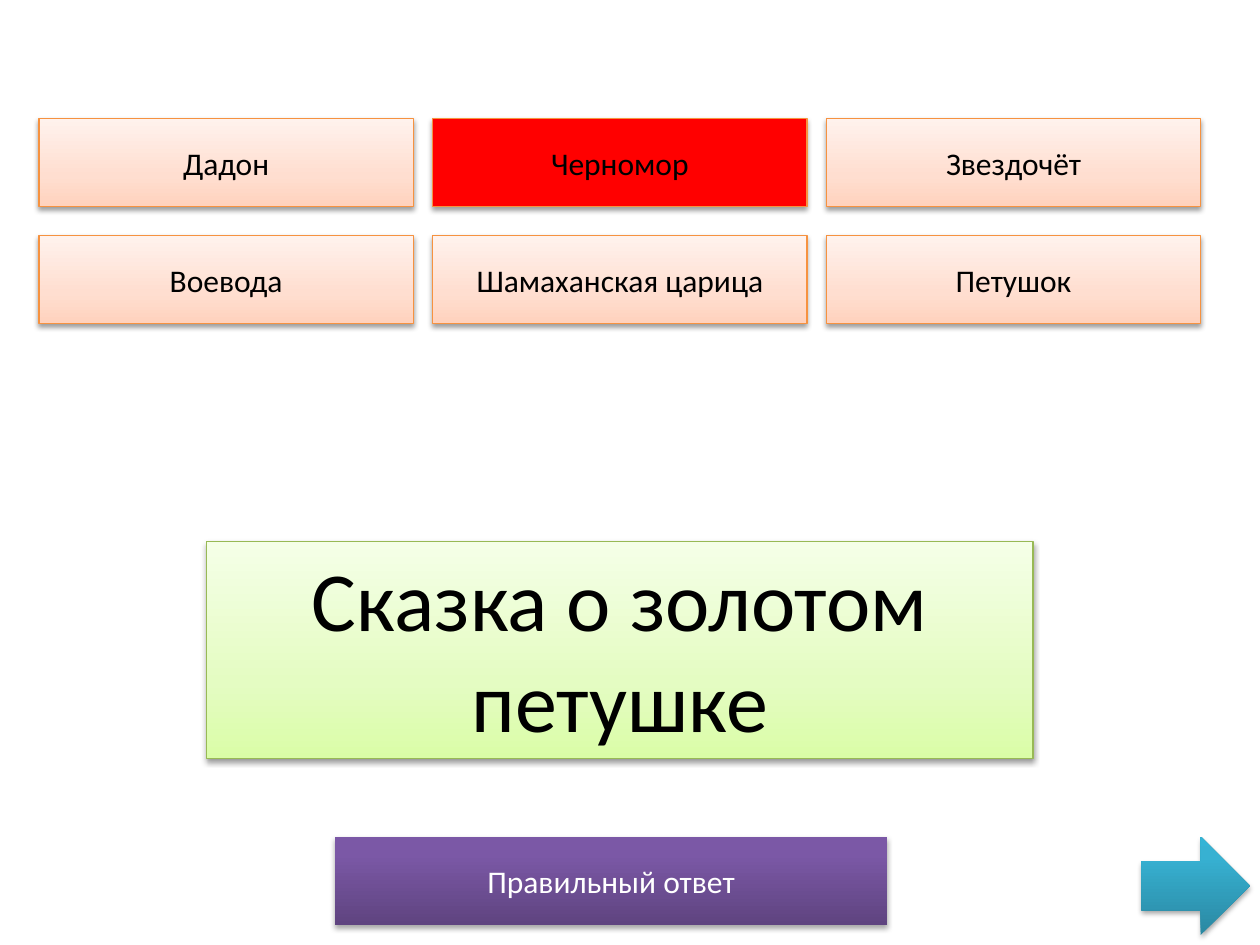
"""Builds a quiz slide: find the character who is not from the fairy tale."""
from copy import deepcopy

from lxml import etree
from pptx import Presentation
from pptx.dml.color import RGBColor
from pptx.enum.shapes import MSO_SHAPE
from pptx.enum.text import MSO_ANCHOR, MSO_AUTO_SIZE, PP_ALIGN
from pptx.oxml.ns import qn
from pptx.util import Inches, Pt

RECT, ARROW = MSO_SHAPE.RECTANGLE, MSO_SHAPE.RIGHT_ARROW
CENTER = PP_ALIGN.CENTER
TOP, MIDDLE = MSO_ANCHOR.TOP, MSO_ANCHOR.MIDDLE
GROW = MSO_AUTO_SIZE.SHAPE_TO_FIT_TEXT

BLACK = RGBColor(0x00, 0x00, 0x00)
WHITE = RGBColor(0xFF, 0xFF, 0xFF)
RED = RGBColor(0xFF, 0x00, 0x00)
ORANGE = RGBColor(0xF6, 0x92, 0x40)
GREEN = RGBColor(0x98, 0xB9, 0x55)
PEACH_STOPS = [(0, RGBColor(0xFF, 0xD2, 0xBD)), (0.35, RGBColor(0xFF, 0xDE, 0xD0)),
               (1, RGBColor(0xFF, 0xF2, 0xED))]
GREEN_STOPS = [(0, RGBColor(0xDA, 0xFD, 0xA7)), (0.35, RGBColor(0xE4, 0xFC, 0xC2)),
               (1, RGBColor(0xF5, 0xFF, 0xE7))]
PURPLE_STOPS = [(0, RGBColor(0x5F, 0x44, 0x80)), (0.8, RGBColor(0x7B, 0x58, 0xA6)),
                (1, RGBColor(0x7C, 0x57, 0xA8))]
TEAL_STOPS = [(0, RGBColor(0x2A, 0x88, 0xA2)), (0.8, RGBColor(0x37, 0xB1, 0xD2)),
              (1, RGBColor(0x34, 0xB4, 0xD6))]


def add_block(kind, left, top, width, height, stops, line=None):
    s = slide.shapes.add_shape(kind, Inches(left), Inches(top), Inches(width), Inches(height))
    s.fill.gradient()
    s.fill.gradient_angle = 90
    gs_list = s._element.spPr.find(qn("a:gradFill")).find(qn("a:gsLst"))
    gs_list.append(deepcopy(gs_list[0]))
    for stop, (position, color) in zip(s.fill.gradient_stops, stops):
        stop.position = position
        stop.color.rgb = color
    if line is None:
        s.line.fill.background()
    else:
        s.line.color.rgb = line
        s.line.width = Pt(0.75)
    s.shadow.inherit = False
    effects = s._element.spPr.find(qn("a:effectLst"))
    shadow = etree.SubElement(effects, qn("a:outerShdw"), blurRad=str(Pt(3.1)),
                              dist=str(Pt(1.6 if line else 1.8)), dir="5400000", rotWithShape="0")
    color = etree.SubElement(shadow, qn("a:srgbClr"), val=str(BLACK))
    etree.SubElement(color, qn("a:alpha"), val="38000" if line else "35000")
    return s


def set_text(s, text, size, color, anchor=MIDDLE):
    tf = s.text_frame
    tf.word_wrap = True
    tf.vertical_anchor = anchor
    p = tf.paragraphs[0]
    p.text = text
    p.alignment = CENTER
    p.font.name = "Calibri"
    p.font.size = Pt(size)
    p.font.color.rgb = color


prs = Presentation()
prs.slide_width, prs.slide_height = Inches(10), Inches(7.5)
slide = prs.slides.add_slide(prs.slide_layouts[6])

button = add_block(RECT, 2.66, 6.64, 4.38, 0.7, PURPLE_STOPS)
set_text(button, "Правильный ответ", 18, WHITE)
add_block(ARROW, 9.06, 6.64, 0.86, 0.78, TEAL_STOPS)

names = [["Дадон", "Черномор", "Звездочёт"], ["Воевода", "Шамаханская царица", "Петушок"]]
odd_one = "Черномор"
for row, row_names in enumerate(names):
    for col, name in enumerate(row_names):
        s = add_block(RECT, 0.31 + 3.125 * col, 0.94 + 0.93 * row, 2.97, 0.7, PEACH_STOPS, ORANGE)
        set_text(s, name, 18, BLACK)
        if name == odd_one:
            s.fill.solid()
            s.fill.fore_color.rgb = RED

tale = add_block(RECT, 1.64, 4.3, 6.56, 1.72, GREEN_STOPS, GREEN)
set_text(tale, "Сказка о золотом петушке", 48, BLACK, TOP)
tale.text_frame.auto_size = GROW

prs.save("out.pptx")
